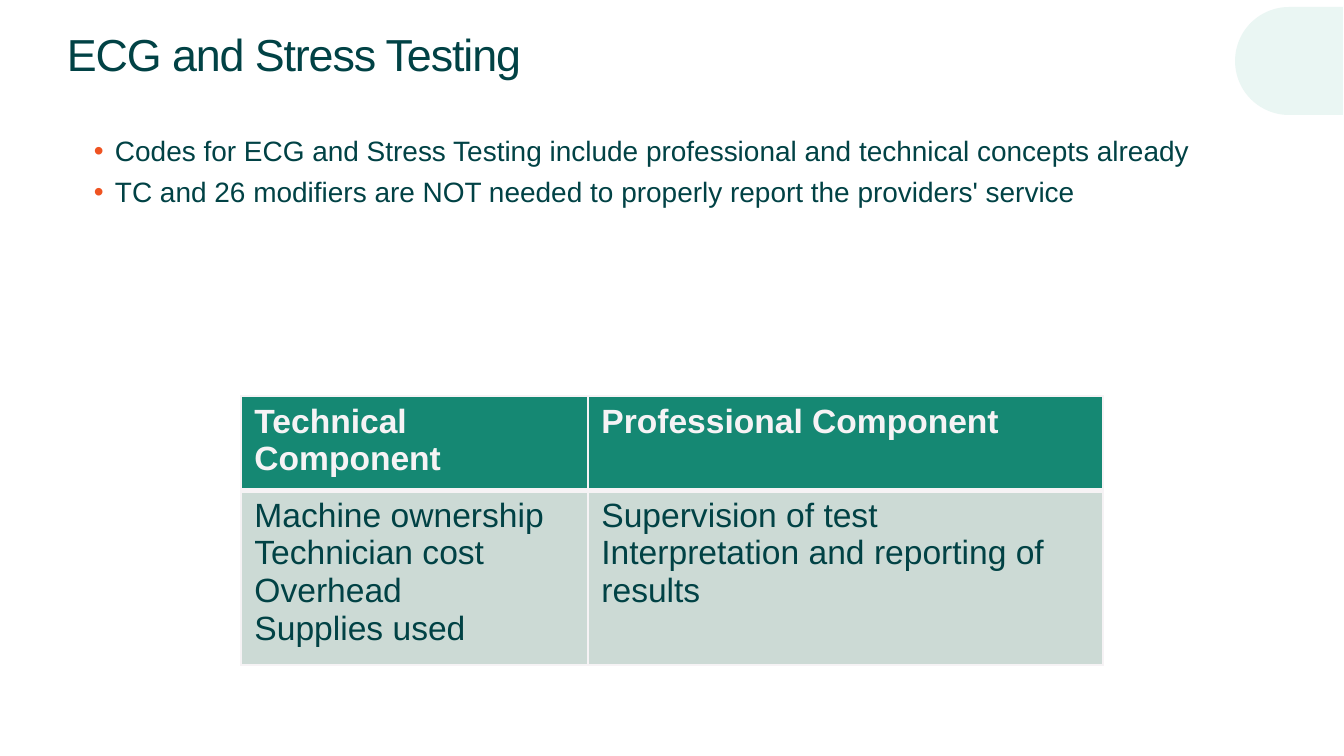
from dataclasses import dataclass

from lxml import etree
from pptx import Presentation
from pptx import util as u
from pptx.dml.color import RGBColor
from pptx.enum import shapes, text
from pptx.oxml import ns

EMU_PER_PX = 914400 / 134.4


@dataclass(frozen=True)
class Theme:
    font: str = "Arial"
    ink: str = "014245"
    accent: str = "EF5321"
    corner: str = "EAF6F3"
    header: str = "158873"
    body: str = "CCDAD5"
    light: str = "F6F3F5"
    title_size: int = 24
    bullet_size: int = 15
    table_size: int = 18


def px(n):
    return u.Emu(round(n * EMU_PER_PX))


def rgb(color):
    return RGBColor.from_string(color)


def add_xml(parent, tag, **attrs):
    return etree.SubElement(parent, ns.qn(tag), attrs)


class Deck:
    def __init__(self, theme, width, height):
        self.theme = theme
        self.prs = Presentation()
        self.prs.slide_width, self.prs.slide_height = px(width), px(height)
        self.slide = self.prs.slides.add_slide(self.prs.slide_layouts[6])

    def run(self, p, words, size, color, bold=False):
        r = p.add_run()
        r.text = words
        r.font.name, r.font.size, r.font.bold = self.theme.font, u.Pt(size), bold
        r.font.color.rgb = rgb(color)
        return r

    def corner(self, x, y, size):
        """Half-round tab; the turn makes its round side face left."""
        sp = self.slide.shapes.add_shape(
            shapes.MSO_SHAPE.FLOWCHART_DELAY, px(x), px(y), px(size), px(size))
        sp.rotation = 180
        sp.shadow.inherit = False
        sp.fill.solid()
        sp.fill.fore_color.rgb = rgb(self.theme.corner)
        sp.line.fill.background()

    def text_frame(self, x, y, w, h, left):
        tf = self.slide.shapes.add_textbox(px(x), px(y), px(w), px(h)).text_frame
        tf.word_wrap = True
        tf.margin_left, tf.margin_right = px(left), px(11)
        tf.margin_top = tf.margin_bottom = px(6)
        return tf

    def title(self, words, x, y, w, h):
        tf = self.text_frame(x, y, w, h, left=22)
        tf.vertical_anchor = text.MSO_ANCHOR.MIDDLE
        r = self.run(tf.paragraphs[0], words, self.theme.title_size, self.theme.ink)
        r.font._element.set("spc", "-60")

    def bullets(self, items, x, y, w, h):
        tf = self.text_frame(x, y, w, h, left=11)
        for i, item in enumerate(items):
            p = tf.add_paragraph() if i else tf.paragraphs[0]
            pPr = p._p.get_or_add_pPr()
            pPr.set("marL", str(px(59)))
            pPr.set("indent", str(px(-21)))
            add_xml(add_xml(pPr, "a:buClr"), "a:srgbClr", val=self.theme.accent)
            add_xml(pPr, "a:buFont", typeface=self.theme.font)
            add_xml(pPr, "a:buChar", char="•")
            if i:
                p.space_before = u.Pt(4)
            self.run(p, item, self.theme.bullet_size, self.theme.ink)

    def borders(self, cell, **widths):
        """Cell edges in points, given in the order L, R, T, B."""
        tcPr = cell._tc.get_or_add_tcPr()
        for side, width in widths.items():
            ln = add_xml(tcPr, f"a:ln{side}", w=str(u.Pt(width)))
            add_xml(add_xml(ln, "a:solidFill"), "a:srgbClr", val=self.theme.light)

    def table(self, rows, x, y, widths, heights):
        t = self.theme
        table = self.slide.shapes.add_table(
            len(heights), len(widths), px(x), px(y),
            px(sum(widths)), px(sum(heights))).table
        table.horz_banding = False
        for column, width in zip(table.columns, widths):
            column.width = px(width)
        for i, (row, height) in enumerate(zip(rows, heights)):
            head = i == 0
            table.rows[i].height = px(height)
            for j, lines in enumerate(row):
                cell = table.cell(i, j)
                self.borders(cell, L=1, R=1, T=1 if head else 3, B=3 if head else 1)
                cell.fill.solid()
                cell.fill.fore_color.rgb = rgb(t.header if head else t.body)
                for k, line in enumerate(lines):
                    tf = cell.text_frame
                    p = tf.add_paragraph() if k else tf.paragraphs[0]
                    self.run(p, line, t.table_size, t.light if head else t.ink, head)


def main():
    deck = Deck(Theme(), 1344, 756)
    deck.corner(1235, 7, 108)
    deck.title("ECG and Stress Testing", 45, 15, 1160, 78)
    deck.bullets([
        "Codes for ECG and Stress Testing include professional and technical concepts already",
        "TC and 26 modifiers are NOT needed to properly report the providers' service",
    ], 45, 128, 1251, 587)
    deck.table([
        [["Technical Component"], ["Professional Component"]],
        [["Machine ownership", "Technician cost", "Overhead", "Supplies used"],
         ["Supervision of test", "Interpretation and reporting of results"]],
    ], 241, 396, widths=[347, 515], heights=[47, 139])
    deck.prs.save("out.pptx")


if __name__ == "__main__":
    main()
